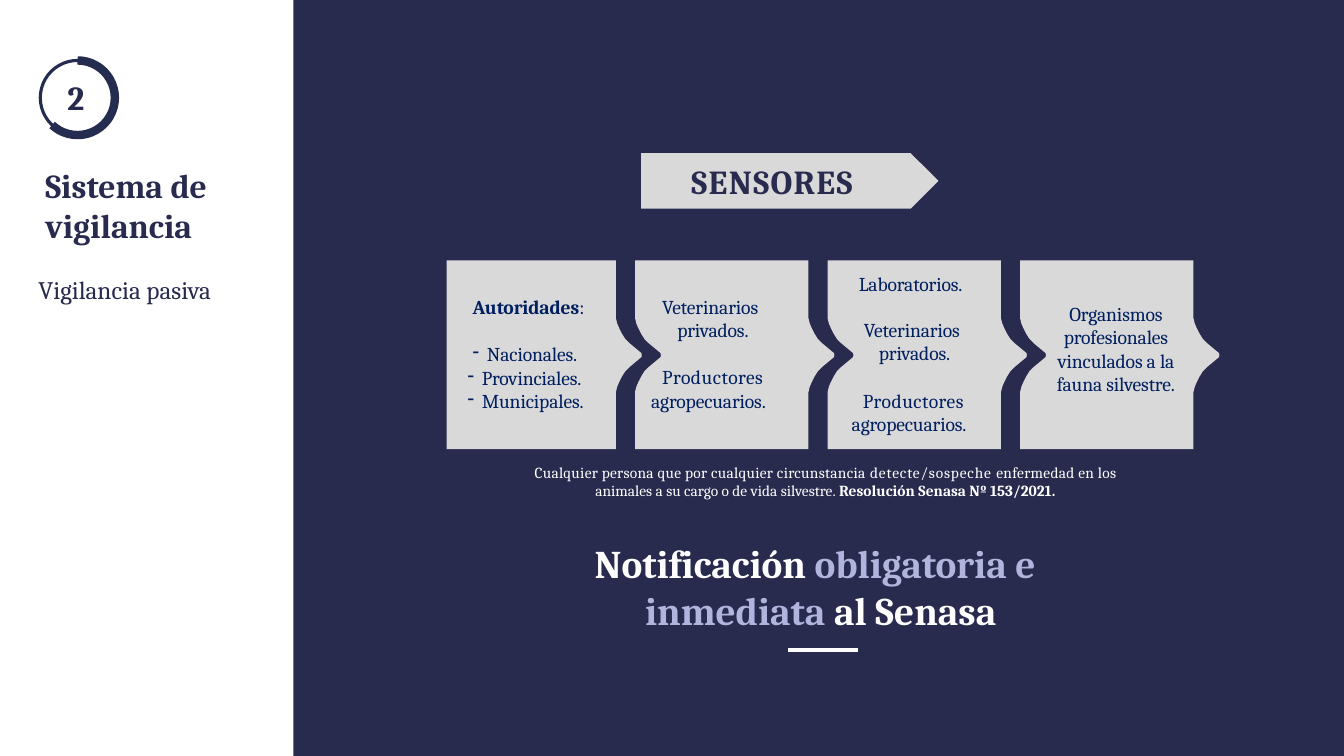
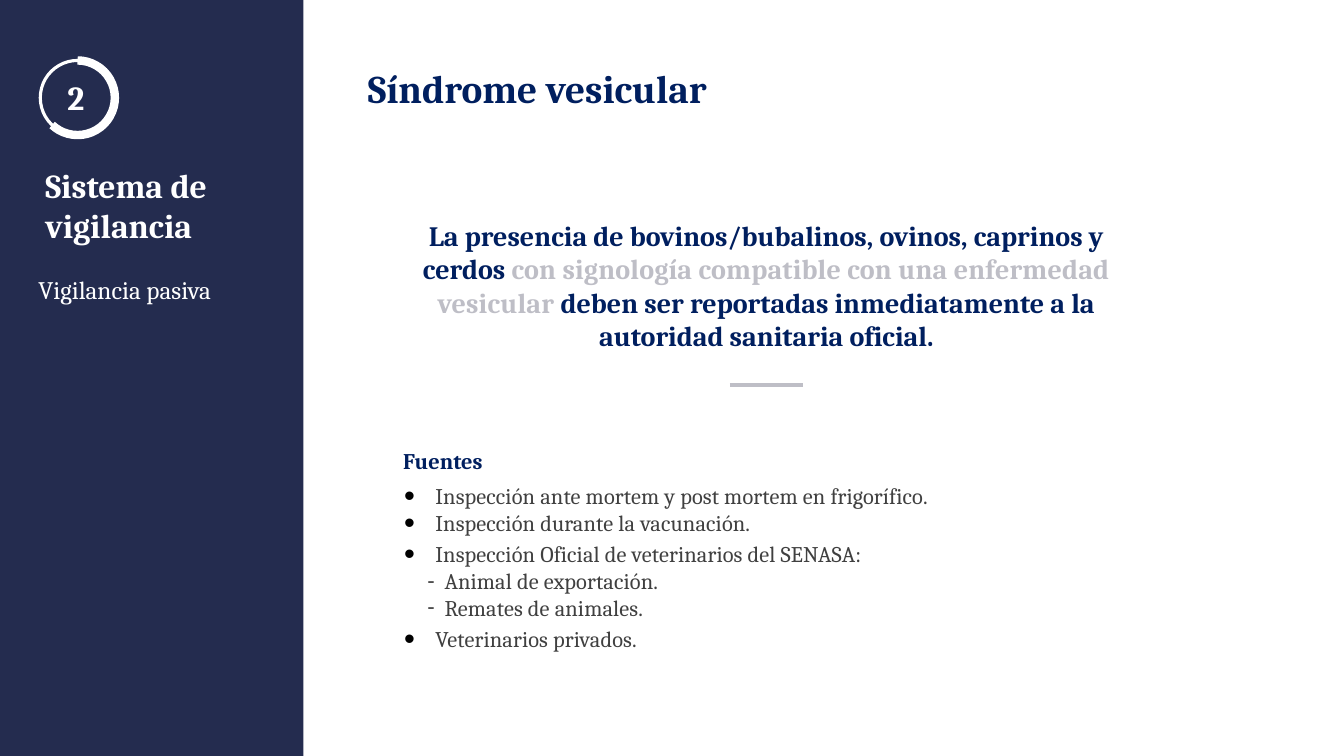
import lxml.etree
import pptx
import pptx.dml.color
import pptx.enum.shapes
import pptx.enum.text
import pptx.oxml.ns
import pptx.util

RGB = pptx.dml.color.RGBColor
NAVY = RGB(0x28, 0x2A, 0x4E)
BAND = RGB(0x24, 0x2C, 0x4F)
BLUE = RGB(0x00, 0x1F, 0x5F)
WHITE = RGB(0xFF, 0xFF, 0xFF)
PANEL = RGB(0xD9, 0xD9, 0xD9)
LILAC = RGB(0xB1, 0xB5, 0xDE)
SILVER = RGB(0xBE, 0xBE, 0xC6)
GRAY = RGB(0x40, 0x40, 0x40)
FONT = "Cambria"
CENTER = pptx.enum.text.PP_ALIGN.CENTER
LEFT = pptx.enum.text.PP_ALIGN.LEFT
SHAPE = pptx.enum.shapes.MSO_SHAPE
Pt = pptx.util.Pt
qn = pptx.oxml.ns.qn

prs = pptx.Presentation()
prs.slide_width = pptx.util.Inches(13.333)
prs.slide_height = pptx.util.Inches(7.5)
COLS, ROWS = 40, 22.5
CELL = prs.slide_width / COLS


def cells(*counts):
    """Turn counts of square grid cells into lengths."""
    return [pptx.util.Emu(round(n * CELL)) for n in counts]


def write(sp, paras, **base):
    """Fill a shape with paragraphs, each a dict of looks and a list of runs."""
    tf = sp.text_frame
    frame = dict(word_wrap=True, auto_size=pptx.enum.text.MSO_AUTO_SIZE.NONE,
                 vertical_anchor=pptx.enum.text.MSO_ANCHOR.TOP, margin_left=0,
                 margin_right=0, margin_top=Pt(1), margin_bottom=0)
    for name, value in frame.items():
        setattr(tf, name, value)
    for i, (look, runs) in enumerate(paras):
        p = tf.add_paragraph() if i else tf.paragraphs[0]
        p.alignment = look.get("align", LEFT)
        p.level = look.get("level", 0)
        p.space_before = Pt(look.get("before", 0))
        pPr = p._p.get_or_add_pPr()
        for name, n in zip(("marL", "indent"), cells(*look.get("indent", (0, 0)))):
            pPr.set(name, str(n))
        # Bullet
        if "bullet" not in look:
            lxml.etree.SubElement(pPr, qn("a:buNone"))
        else:
            if look["bullet"] == "•":
                clr = lxml.etree.SubElement(pPr, qn("a:buClr"))
                lxml.etree.SubElement(clr, qn("a:srgbClr")).set("val", "000000")
                lxml.etree.SubElement(pPr, qn("a:buSzPct")).set("val", "138000")
            lxml.etree.SubElement(pPr, qn("a:buChar")).set("char", look["bullet"])
        # Runs
        for text, change in runs:
            fmt = {"size": 14, "bold": False, "color": BLUE, "spc": 0, **base, **change}
            r = p.add_run()
            r.text = text
            r.font.name = FONT
            r.font.size = Pt(fmt["size"])
            r.font.bold = fmt["bold"]
            r.font.color.rgb = fmt["color"]
            if fmt["spc"]:
                r._r.get_or_add_rPr().set("spc", str(round(fmt["spc"] * 100)))


sensors = prs.slides.add_slide(prs.slide_layouts[5])
syndrome = prs.slides.add_slide(prs.slide_layouts[1])

# Shared parts: colour band, numbered ring, section name, short rule
RULES = [(sensors, 8.73, COLS - 8.73, NAVY, NAVY, BAND, 23.46, 19.35, 2.07, WHITE),
         (syndrome, 0, 9.03, BAND, WHITE, WHITE, 21.72, 11.46, 2.19, SILVER)]
for s, left, width, band, ink, ring, rule_x, rule_y, rule_w, rule_color in RULES:
    sp = s.shapes.add_shape(SHAPE.RECTANGLE, *cells(left, 0, width, ROWS))
    sp.shadow.inherit = False
    sp.fill.solid()
    sp.fill.fore_color.rgb = band
    sp.line.fill.background()

    for kind, weight in ((SHAPE.OVAL, 2.25), (SHAPE.ARC, 6)):
        sp = s.shapes.add_shape(kind, *cells(1.2, 1.8, 2.22, 2.22))
        sp.shadow.inherit = False
        sp.fill.background()
        sp.line.color.rgb = ring
        sp.line.width = Pt(weight)
    # The arc runs from 270 to 133 degrees
    sp.adjustments[0], sp.adjustments[1] = 270 * 0.6, 133 * 0.6

    sp = s.shapes.add_textbox(*cells(1.98, 2.25, 0.9, 1.3))
    write(sp, [({"before": 1, "indent": (0.03, 0)}, [("2", {})])],
          size=24, bold=True, color=ink)
    sp = s.shapes.add_textbox(*cells(1.11, 4.86, 5.8, 4.26))
    write(sp, [({"before": 1, "indent": (0.24, 0)},
                [("Sistema de vigilancia", {"size": 24, "bold": True})]),
               ({"before": 21, "indent": (0.03, 0)},
                [("Vigilancia pasiva", {"size": 18})])], color=ink)

    x1, x2, y = cells(rule_x, rule_x + rule_w, rule_y)
    line = s.shapes.add_connector(pptx.enum.shapes.MSO_CONNECTOR.STRAIGHT, x1, y, x2, y)
    line.line.color.rgb = rule_color
    line.line.width = Pt(3)
    lxml.etree.SubElement(line._element.spPr, qn("a:effectLst"))

# Slide 1: heading arrow
s = sensors
sp = s.shapes.add_shape(SHAPE.PENTAGON, *cells(19.08, 4.56, 8.85, 1.65))
panels = [sp]

# Slide 1: chain of panels, each pointing into the next
TOP, MIDDLE, BOTTOM = 7.75, 10.57, 13.37
BODY, STEP, FIRST_RIGHT = 5.16, 5.73, 18.33
half = [(0, -1.1), (0.04, -0.94), (0.1, -0.8), (0.18, -0.64), (0.28, -0.48),
        (0.4, -0.36), (0.7, -0.11), (0.76, -0.06)]
tip = half + [(0.77, 0)] + [(dx, -dy) for dx, dy in reversed(half)]
for i in range(4):
    right = FIRST_RIGHT + i * STEP
    left = right - BODY if i else 13.29
    outline = [(left, TOP), (right, TOP)]
    outline += [(right + dx, MIDDLE + dy) for dx, dy in tip]
    outline += [(right, BOTTOM), (left, BOTTOM)]
    if i:
        outline += [(left + dx, MIDDLE + dy) for dx, dy in reversed(tip)]
    points = [cells(*point) for point in outline]
    ff = s.shapes.build_freeform(*points[0])
    ff.add_line_segments(points[1:], close=True)
    panels.append(ff.convert_to_shape())
for sp in panels:
    sp.shadow.inherit = False
    sp.fill.solid()
    sp.fill.fore_color.rgb = PANEL
    sp.line.fill.background()

# Slide 1: title, brought in front of its arrow
sp = s.shapes.title
sp.left, sp.top, sp.width, sp.height = cells(20.55, 4.74, 6, 1.29)
write(sp, [({"before": 1, "indent": (0.03, 0)}, [("SENSORES", {})])],
      size=24, bold=True, color=NAVY, spc=1)
sp.element.getparent().append(sp.element)

# Slide 1: panel texts
dash = {"bullet": "-", "indent": (0.48, -0.42)}
vets = [({"before": 1, "indent": (0.48, -0.45)}, [("Veterinarios privados.", {})])]
farms = [({"before": 1, "indent": (0.36, 0)}, [("Productores", {"spc": 0.35})]),
         ({"indent": (0.03, 0)}, [("agropecuarios.", {})])]
texts = [
    ((14.07, 8.73, 3.9, 0.8),
     [({"before": 1}, [("Autoridades", {"bold": True}), (":", {})])]),
    ((13.86, 10.14, 4.4, 2.2),
     [({**dash, "before": 1, "indent": (0.63, -0.42)}, [("Nacionales.", {})]),
      (dash, [("Provinciales.", {})]), (dash, [("Municipales.", {})])]),
    ((19.68, 8.73, 3.42, 1.5), vets),
    ((19.35, 10.83, 4.11, 1.5), farms),
    ((25.53, 8.04, 4, 0.8), [({"before": 1, "indent": (0.03, 0)}, [("Laboratorios.", {})])]),
    ((25.68, 9.42, 3.42, 1.5), vets),
    ((25.32, 11.52, 4.11, 1.5), farms),
    ((31.14, 8.94, 4.14, 2.9),
     [({"before": 1, "align": CENTER},
       [("Organismos profesionales vinculados a la fauna silvestre.", {})])]),
]
for box, paras in texts:
    write(s.shapes.add_textbox(*cells(*box)), paras, spc=-0.1)

# Slide 1: note and closing message
sp = s.shapes.add_textbox(*cells(15.06, 13.74, 19.02, 1.2))
write(sp, [({"before": 1, "align": CENTER},
            [("Cualquier persona que por cualquier circunstancia ", {"spc": 0.2}),
             ("detecte/sospeche ", {"spc": 0.6}), ("enfermedad en los", {"spc": 0.2})]),
           ({"align": CENTER},
            [("animales a su cargo o de vida silvestre. ", {}),
             ("Resolución Senasa Nº 153/2021.", {"bold": True})])],
      size=11, color=WHITE)
sp = s.shapes.add_textbox(*cells(17.64, 16.02, 13.8, 2.88))
write(sp, [({"before": 1, "indent": (1.56, -1.5)},
            [("Notificación ", {}), ("obligatoria e inmediata ", {"color": LILAC}),
             ("al Senasa", {})])], size=28, bold=True, color=WHITE)

# Slide 2: title and message
s = syndrome
sp = s.shapes.title
sp.left, sp.top, sp.width, sp.height = cells(10.92, 1.86, 21.57, 2)
write(sp, [({"before": 1, "indent": (0.03, 0)}, [("Síndrome vesicular", {})])],
      size=28, bold=True)
sp = s.shapes.add_textbox(*cells(12.18, 6.45, 21.27, 4.08))
write(sp, [({"before": 1, "align": CENTER},
            [("La presencia de bovinos/bubalinos, ovinos, caprinos y cerdos ", {}),
             ("con signología compatible con una enfermedad vesicular ",
              {"color": SILVER, "spc": 0.1}),
             ("deben ser reportadas inmediatamente a la autoridad sanitaria oficial.", {})])],
      size=20, bold=True)

# Slide 2: list of sources
sources = [("•", 6, "Inspección ante mortem y post mortem en frigorífico."),
           ("•", 0, "Inspección durante la vacunación."),
           ("•", 3, "Inspección Oficial de veterinarios del SENASA:"),
           ("-", 0, "Animal de exportación."),
           ("-", 0, "Remates de animales."),
           ("•", 3, "Veterinarios privados.")]
LEVELS = {"•": (0, (0.99, -0.93)), "-": (1, (1.26, -0.51))}
paras = [({"before": 1, "indent": (0.03, 0)}, [("Fuentes", {"bold": True, "color": BLUE})])]
for bullet, before, text in sources:
    level, indent = LEVELS[bullet]
    paras.append(({"bullet": bullet, "before": before, "level": level, "indent": indent},
                  [(text, {"spc": 0.1})]))
sp = s.placeholders[1]
sp.left, sp.top, sp.width, sp.height = cells(11.97, 13.26, 17.73, 6.24)
write(sp, paras, size=16, color=GRAY)

prs.save("out.pptx")
